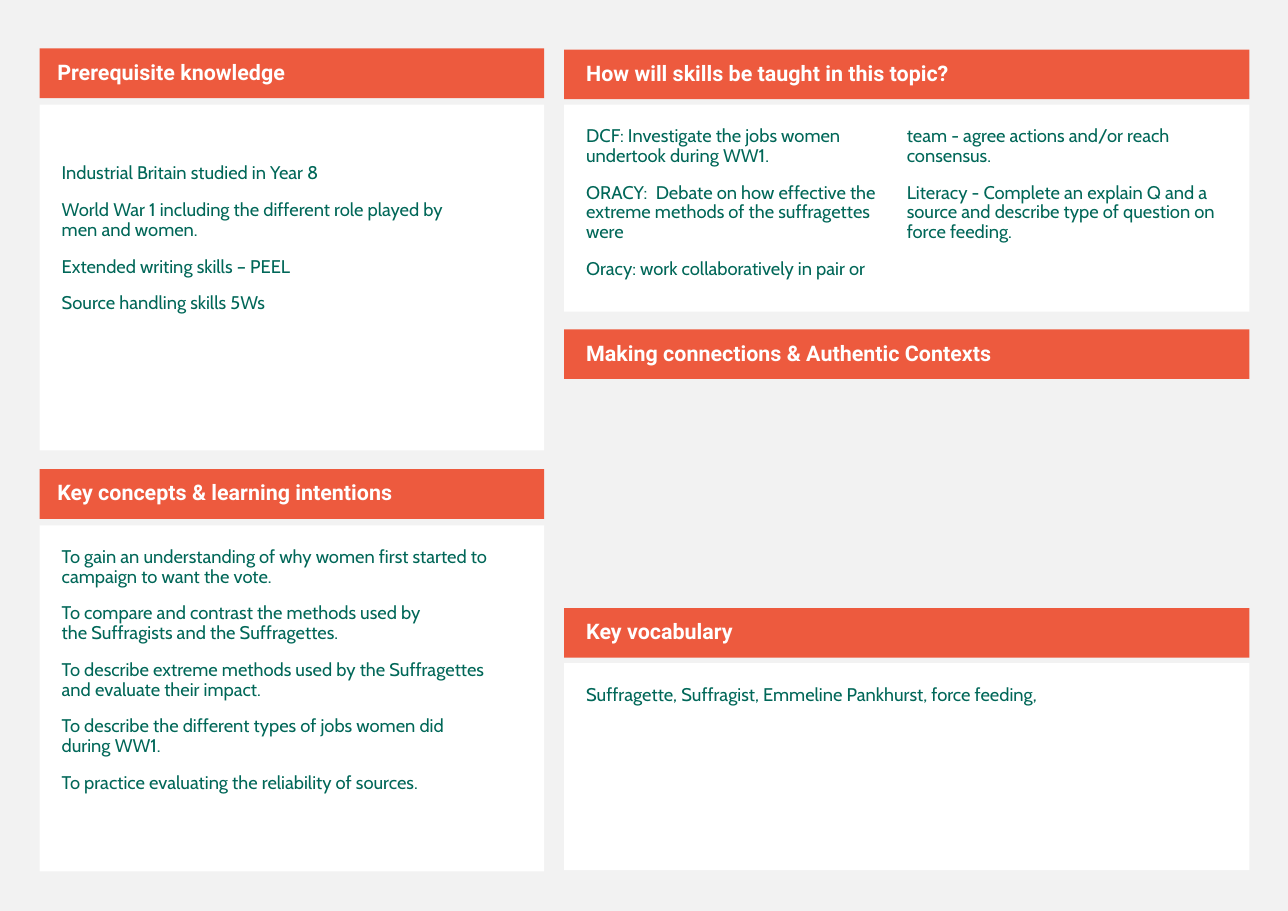
from dataclasses import dataclass

from pptx import Presentation
from pptx.dml.color import RGBColor
from pptx.enum.shapes import MSO_SHAPE as Preset
from pptx.enum.text import MSO_ANCHOR as Anchor, PP_ALIGN as Align
from pptx.shapes.autoshape import Shape
from pptx.slide import Slide
from pptx.util import Emu, Pt

PX = 9144  # 100 px to the inch
GREY, WHITE, ORANGE, GREEN = "F2F2F2", "FFFFFF", "ED5A3E", "006758"
NBSP = chr(160)  # written as ~ in the wording below
HEADER_HEIGHT = 45
PADDING = 20


@dataclass(frozen=True)
class Column:
    left: int
    width: int
    header_inset: int
    body_offset: int
    body_height: int


@dataclass(frozen=True)
class Section:
    column: Column
    top: int
    title: str
    lines: tuple[str, ...] = ()
    text_top: int = PADDING
    text_columns: int = 1


LEFT = Column(36, 458, header_inset=16, body_offset=51, body_height=314)
RIGHT = Column(512, 622, header_inset=20, body_offset=50, body_height=188)

SECTIONS = (
    Section(LEFT, 44, "Prerequisite knowledge", (
        "Industrial Britain studied in Year 8",
        "World War 1 including the different role played by men~and~women.",
        "Extended writing skills – PEEL",
        "Source handling skills 5Ws",
    ), text_top=54),
    Section(LEFT, 426, "Key concepts & learning intentions", (
        "To gain an understanding of why women first started to campaign to want the vote.",
        "To compare and contrast the methods used by the~Suffragists and the Suffragettes.",
        "To describe extreme methods used by the Suffragettes and~evaluate their impact.",
        "To describe the different types of jobs women did during~WW1.",
        "To practice evaluating the reliability of sources.",
    )),
    Section(RIGHT, 45, "How will skills be taught in this topic?", (
        "DCF: Investigate the jobs women undertook during WW1.",
        "ORACY:~ Debate on how effective the extreme methods of the suffragettes were",
        "Oracy: work collaboratively in pair or team - agree actions and/or reach consensus.",
        "Literacy - Complete an explain Q and a source and describe type of question "
        "on force feeding.",
    ), text_columns=2),
    Section(RIGHT, 299, "Making connections & Authentic Contexts"),
    Section(RIGHT, 552, "Key vocabulary", (
        "Suffragette, Suffragist, Emmeline Pankhurst, force feeding,",
    )),
)


def px(length: int) -> Emu:
    return Emu(length * PX)


def color(value: str) -> RGBColor:
    return RGBColor.from_string(value)


def add_panel(slide: Slide, left: int, top: int, width: int, height: int, fill: str) -> Shape:
    panel = slide.shapes.add_shape(Preset.RECTANGLE, px(left), px(top), px(width), px(height))
    panel.shadow.inherit = False
    panel.fill.solid()
    panel.fill.fore_color.rgb = color(fill)
    panel.line.fill.background()
    return panel


def write(panel: Shape, lines: tuple[str, ...], *, font: str, size: int, ink: str,
          insets: tuple[int, int, int, int], anchor: Anchor = Anchor.TOP,
          bold: bool = False, columns: int = 1) -> None:
    """Fill a panel with paragraphs; insets run left, top, right, bottom."""
    frame = panel.text_frame
    frame.word_wrap = True
    frame.vertical_anchor = anchor
    (frame.margin_left, frame.margin_top,
     frame.margin_right, frame.margin_bottom) = map(px, insets)
    if columns > 1:
        panel.text_frame._txBody.bodyPr.set("numCol", str(columns))
    for index, line in enumerate(lines):
        paragraph = frame.add_paragraph() if index else frame.paragraphs[0]
        paragraph.alignment = Align.LEFT
        paragraph.line_spacing = 0.9
        paragraph.space_before = Pt(11)
        run = paragraph.add_run()
        run.text = line.replace("~", NBSP)
        run.font.name = font
        run.font.size = Pt(size)
        run.font.bold = bold
        run.font.color.rgb = color(ink)


def add_section(slide: Slide, section: Section) -> None:
    column = section.column
    # Body
    if section.lines:
        body = add_panel(slide, column.left, section.top + column.body_offset,
                         column.width, column.body_height, WHITE)
        write(body, section.lines, font="Cabin", size=12, ink=GREEN,
              insets=(PADDING, section.text_top, PADDING, PADDING),
              columns=section.text_columns)
    # Header bar
    header = add_panel(slide, column.left, section.top, column.width, HEADER_HEIGHT, ORANGE)
    write(header, (section.title,), font="Roboto", size=14, ink=WHITE, bold=True,
          insets=(column.header_inset, 5, 10, 5), anchor=Anchor.MIDDLE)


def main() -> None:
    deck = Presentation()
    deck.slide_width, deck.slide_height = px(1169), px(827)
    slide = deck.slides.add_slide(deck.slide_layouts[6])
    slide.background.fill.solid()
    slide.background.fill.fore_color.rgb = color(GREY)
    for section in SECTIONS:
        add_section(slide, section)
    deck.save("out.pptx")


if __name__ == "__main__":
    main()
